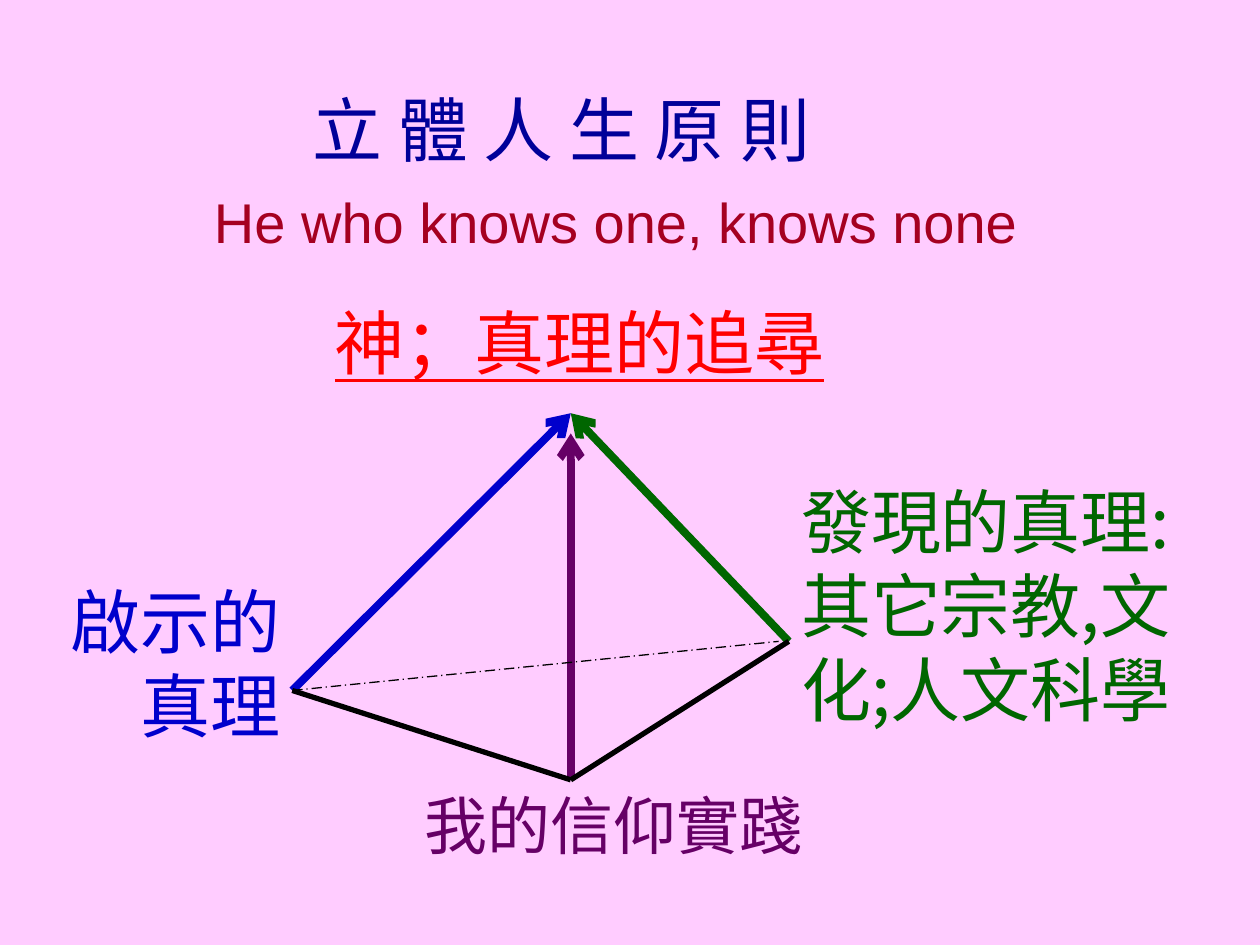
from pptx import Presentation
from pptx.dml.color import RGBColor
from pptx.enum.dml import MSO_LINE
from pptx.enum.shapes import MSO_CONNECTOR
from pptx.enum.text import MSO_ANCHOR, PP_ALIGN
from pptx.oxml.ns import qn
from pptx.util import Inches, Pt
from lxml.etree import SubElement


def color(value):
    return RGBColor.from_string(value)


prs = Presentation()
prs.slide_width, prs.slide_height = Inches(10), Inches(7.5)
W, H = prs.slide_width / 100, prs.slide_height / 100
s = prs.slides.add_slide(prs.slide_layouts[5])
s.background.fill.solid()
s.background.fill.fore_color.rgb = color("FFCCFF")

apex, peak = (45.3, 43.73), (45.3, 45.87)
left, front, right = (23.2, 73.07), (45.3, 82.53), (62.6, 67.87)
edges = [
    (apex, left, "0000CC", 4.5, True, None),
    (peak, front, "660066", 4.5, True, None),
    (apex, right, "006600", 4.5, True, None),
    (left, front, "000000", 3, False, None),
    (front, right, "000000", 3, False, None),
    (left, (61.8, 67.87), "000000", 0.75, False, MSO_LINE.LONG_DASH_DOT),
]
for (x1, y1), (x2, y2), rgb, width, arrow, dash in edges:
    sp = s.shapes.add_connector(
        MSO_CONNECTOR.STRAIGHT, int(x1 * W), int(y1 * H), int(x2 * W), int(y2 * H))
    sp.line.color.rgb = color(rgb)
    sp.line.width = Pt(width)
    if dash:
        sp.line.dash_style = dash
    if arrow:
        SubElement(sp.line._get_or_add_ln(), qn("a:headEnd"), type="arrow")
    SubElement(sp._element.spPr, qn("a:effectLst"))

CJK = "Noto Sans CJK SC"
L, R = PP_ALIGN.LEFT, PP_ALIGN.RIGHT
texts = [
    (s.shapes.title, "立 體 人 生 原 則", (23.8, 8.5, 45, 10.3), L,
     {"size": Pt(40), "name": "Arial"}, "000099"),
    (None, "He who knows one, knows none", (16, 19.2, 68, 8.2), L,
     {"size": Pt(32), "name": "Arial"}, "A50021"),
    (None, "啟示的真理", (2.7, 60.53, 20.5, 19.07), R,
     {"size": Pt(40), "name": CJK}, "0000CC"),
    (None, "發現的真理:其它宗教,文化;人文科學", (62.6, 50, 33.9, 37), L,
     {"size": Pt(40), "name": CJK}, "006600"),
    (None, "我的信仰實踐", (32.7, 82.53, 33.1, 9.33), L,
     {"size": Pt(36), "name": CJK}, "660066"),
    (None, "神；真理的追尋", (25.6, 31.07, 42.5, 10.27), L,
     {"size": Pt(40), "name": CJK, "underline": True}, "FF0000"),
]
for sp, text, (x, y, w, h), align, font, rgb in texts:
    sp = sp or s.shapes.add_textbox(0, 0, 0, 0)
    sp.left, sp.top, sp.width, sp.height = int(x * W), int(y * H), int(w * W), int(h * H)
    tf = sp.text_frame
    tf.word_wrap = True
    tf.vertical_anchor = MSO_ANCHOR.TOP
    p = tf.paragraphs[0]
    p.alignment = align
    r = p.add_run()
    r.text = text
    for key, value in font.items():
        setattr(r.font, key, value)
    r.font.color.rgb = color(rgb)

prs.save("out.pptx")
